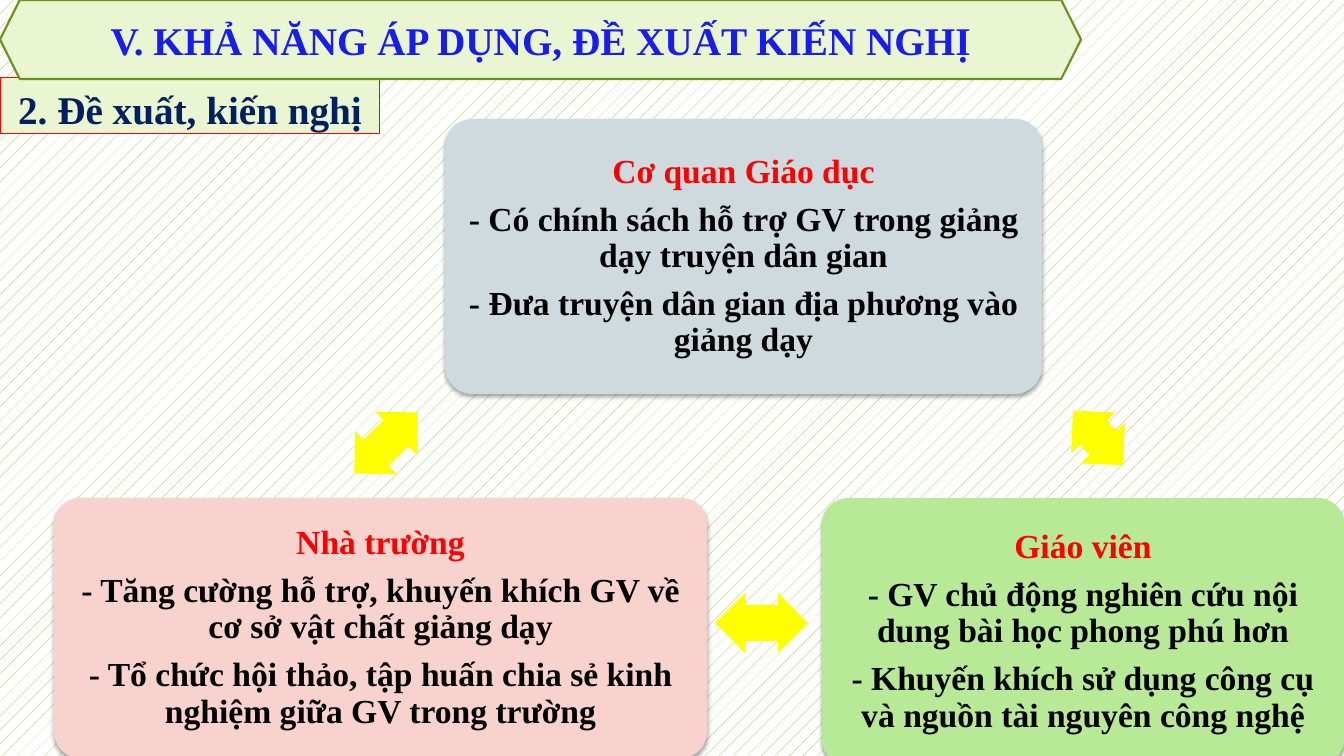
from lxml import etree
from pptx import Presentation
from pptx.dml.color import RGBColor
from pptx.enum.dml import MSO_PATTERN
from pptx.enum.shapes import MSO_SHAPE
from pptx.enum.text import MSO_ANCHOR, PP_ALIGN
from pptx.oxml.ns import qn
from pptx.util import Pt

EMU_PER_PX = 914400 / 100.8
FONT_NAME = "Times New Roman"
RECTANGLE = MSO_SHAPE.RECTANGLE
ROUNDED = MSO_SHAPE.ROUNDED_RECTANGLE
HEXAGON = MSO_SHAPE.HEXAGON
DOUBLE_ARROW = MSO_SHAPE.LEFT_RIGHT_ARROW
MIDDLE = MSO_ANCHOR.MIDDLE
TOP = MSO_ANCHOR.TOP
CENTER = PP_ALIGN.CENTER
DOTS = MSO_PATTERN.PERCENT_5

PALE_GREEN = "EAF6D1"
RED = "FF0000"
BLACK = "000000"
YELLOW = "FFFF00"

CARDS = [
    ((445, 119, 597, 275), "CFDADF", "Cơ quan Giáo dục", [
        "- Có chính sách hỗ trợ GV trong giảng dạy truyện dân gian",
        "- Đưa truyện dân gian địa phương vào giảng dạy",
    ]),
    ((822, 498, 522, 268), "B7E996", "Giáo viên", [
        "- GV chủ động nghiên cứu nội dung bài học phong phú hơn",
        "- Khuyến khích sử dụng công cụ và nguồn tài nguyên công nghệ",
    ]),
    ((54, 498, 653, 260), "F8D2CC", "Nhà trường", [
        "- Tăng cường hỗ trợ, khuyến khích GV về cơ sở vật chất giảng dạy",
        "- Tổ chức hội thảo, tập huấn chia sẻ kinh nghiệm giữa GV trong trường",
    ]),
]
ARROWS = [
    ((1061, 408, 74, 60), 47.4),
    ((715, 593, 93, 60), 0.3),
    ((342, 413, 88, 60), 316.1),
]


def px(length):
    return round(length * EMU_PER_PX)


def color(value):
    return RGBColor.from_string(value)


def set_attributes(target, values):
    for name, value in values.items():
        setattr(target, name, value)


def add_shape(slide, kind, box, fill, line=None, line_width=0):
    shape = slide.shapes.add_shape(kind, *map(px, box))
    shape.shadow.inherit = False
    shape.fill.solid()
    shape.fill.fore_color.rgb = color(fill)
    if line:
        shape.line.color.rgb = color(line)
        shape.line.width = Pt(line_width)
    else:
        shape.line.fill.background()
    return shape


def write_paragraph(paragraph, text, size, text_color, **layout):
    set_attributes(paragraph, {"alignment": CENTER, **layout})
    run = paragraph.add_run()
    run.text = text
    set_attributes(run.font, {"name": FONT_NAME, "size": Pt(size), "bold": True})
    run.font.color.rgb = color(text_color)


def add_soft_shadow(shape):
    effects = shape._element.spPr.find(qn("a:effectLst"))
    shadow = etree.SubElement(effects, qn("a:outerShdw"), blurRad=str(Pt(3)),
                              dist=str(Pt(2)), dir="5400000", rotWithShape="0")
    shade = etree.SubElement(shadow, qn("a:srgbClr"), val=BLACK)
    etree.SubElement(shade, qn("a:alpha"), val="35000")


def add_background(slide):
    fill = slide.background.fill
    fill.patterned()
    fill.pattern = DOTS
    fill.fore_color.rgb = color("90C226")
    fill.back_color.rgb = color("FFFFFF")


def add_subtitle(slide, box):
    shape = add_shape(slide, RECTANGLE, box, PALE_GREEN, RED, 0.75)
    set_attributes(shape.text_frame, {
        "word_wrap": True, "vertical_anchor": TOP, "margin_top": px(7)})
    write_paragraph(shape.text_frame.paragraphs[0], "2. Đề xuất, kiến nghị", 28, "002060")


def add_banner(slide, box):
    shape = add_shape(slide, HEXAGON, box, PALE_GREEN, "6B901C", 1.5)
    set_attributes(shape.text_frame, {"word_wrap": True, "vertical_anchor": MIDDLE})
    write_paragraph(shape.text_frame.paragraphs[0],
                    "V. KHẢ NĂNG ÁP DỤNG, ĐỀ XUẤT KIẾN NGHỊ", 28, "171CF1")


def add_card(slide, box, fill, heading, proposals):
    shape = add_shape(slide, ROUNDED, box, fill)
    shape.adjustments[0] = 0.1
    add_soft_shadow(shape)
    frame = shape.text_frame
    set_attributes(frame, {"word_wrap": True, "vertical_anchor": MIDDLE})
    for side in ("left", "top", "right", "bottom"):
        setattr(frame, f"margin_{side}", px(10))
    for index, text in enumerate([heading, *proposals]):
        paragraph = frame.add_paragraph() if index else frame.paragraphs[0]
        write_paragraph(paragraph, text, 24, BLACK if index else RED,
                        line_spacing=0.9, space_after=Pt(8.4))


def add_arrow(slide, box, rotation):
    shape = add_shape(slide, DOUBLE_ARROW, box, YELLOW)
    shape.adjustments[0] = 0.6
    shape.adjustments[1] = 0.5
    shape.rotation = rotation


def main():
    presentation = Presentation()
    set_attributes(presentation, {"slide_width": px(1344), "slide_height": px(756)})
    slide = presentation.slides.add_slide(presentation.slide_layouts[6])
    add_background(slide)
    add_subtitle(slide, (0, 78, 380, 56))
    add_banner(slide, (0, 0, 1081, 79))
    for card in CARDS:
        add_card(slide, *card)
    for arrow in ARROWS:
        add_arrow(slide, *arrow)
    presentation.save("out.pptx")


if __name__ == "__main__":
    main()
